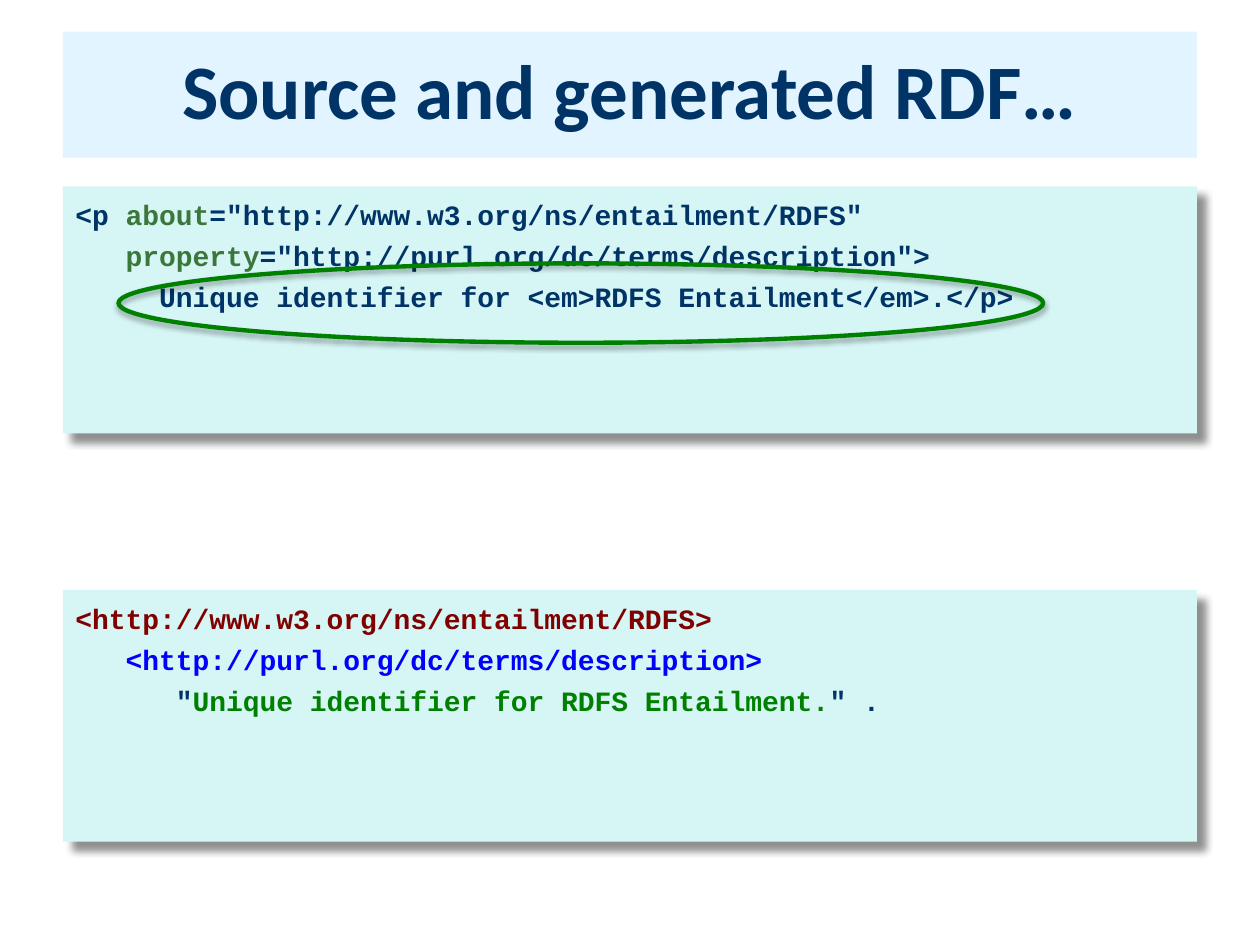
from dataclasses import dataclass
from typing import Optional

from lxml.etree import SubElement
from pptx import Presentation
from pptx.dml.color import RGBColor as RGB
from pptx.enum.shapes import MSO_SHAPE as Shape
from pptx.enum.text import MSO_ANCHOR as Anchor, PP_ALIGN as Align
from pptx.oxml.ns import qn
from pptx.util import Cm, Pt


@dataclass(frozen=True)
class Theme:
    navy: str = "003366"
    attribute: str = "3B773B"
    subject: str = "800000"
    predicate: str = "0000FF"
    literal: str = "008000"
    title_fill: str = "E1F4FF"
    code_fill: str = "D6F5F5"
    title_font: str = "Calibri"
    code_font: str = "Courier New"
    title_size: int = 44
    code_size: int = 16


@dataclass(frozen=True)
class Shadow:
    opacity: int
    blur: float
    distance: float
    angle: int


@dataclass(frozen=True)
class Box:
    """A filled or outlined shape, placed in centimetres."""
    left: float
    top: float
    width: float
    height: float
    fill: Optional[str] = None
    line: Optional[str] = None
    kind: Shape = Shape.RECTANGLE
    shadow: Optional[Shadow] = None


@dataclass(frozen=True)
class Run:
    text: str
    color: str


T = Theme()
LEFT, WIDTH = 1.27, 22.86
CODE_SHADOW = Shadow(43, 4, 7, 45)

TITLE = Box(LEFT, 0.64, WIDTH, 2.54, T.title_fill)
SOURCE = Box(LEFT, 3.76, WIDTH, 4.98, T.code_fill, shadow=CODE_SHADOW)
GENERATED = Box(LEFT, 11.89, WIDTH, 5.08, T.code_fill, shadow=CODE_SHADOW)
HIGHLIGHT = Box(2.39, 5.31, 18.64, 1.6, line=T.literal, kind=Shape.OVAL,
                shadow=Shadow(35, 3.1, 1.8, 90))

SOURCE_CODE = [
    [Run("<p ", T.navy), Run("about", T.attribute),
     Run('="http://www.w3.org/ns/entailment/RDFS"', T.navy)],
    [Run("   ", T.navy), Run("property", T.attribute),
     Run('="http://purl.org/dc/terms/description">', T.navy)],
    [Run("     Unique identifier for <em>RDFS Entailment</em>.</p>", T.navy)],
]
GENERATED_CODE = [
    [Run("<http://www.w3.org/ns/entailment/RDFS>", T.subject)],
    [Run("   ", T.navy),
     Run("<http://purl.org/dc/terms/description>", T.predicate)],
    [Run('      "', T.navy),
     Run("Unique identifier for RDFS Entailment.", T.literal),
     Run('" .', T.navy)],
]


def set_attributes(target, values: dict) -> None:
    for name, value in values.items():
        setattr(target, name, value)


def add_shadow(s, shadow: Shadow) -> None:
    effects = s._element.spPr.find(qn("a:effectLst"))
    outer = SubElement(effects, qn("a:outerShdw"), {
        "blurRad": str(Pt(shadow.blur)), "dist": str(Pt(shadow.distance)),
        "dir": str(shadow.angle * 60000), "algn": "ctr", "rotWithShape": "0"})
    color = SubElement(outer, qn("a:srgbClr"), val="000000")
    SubElement(color, qn("a:alpha"), val=str(shadow.opacity * 1000))


def add_box(slide, box: Box):
    place = (Cm(v) for v in (box.left, box.top, box.width, box.height))
    s = slide.shapes.add_shape(box.kind, *place)
    if box.fill:
        s.fill.solid()
        s.fill.fore_color.rgb = RGB.from_string(box.fill)
    else:
        s.fill.background()
    if box.line:
        s.line.color.rgb = RGB.from_string(box.line)
        s.line.width = Pt(2.5)
    else:
        s.line.fill.background()
    s.shadow.inherit = False
    if box.shadow:
        add_shadow(s, box.shadow)
    return s


def write(s, lines: list[list[Run]], frame: dict, paragraph: dict,
          font: dict, gap: float = 0) -> None:
    """Write one paragraph per line, with a gap in points between them."""
    tf = s.text_frame
    set_attributes(tf, {"word_wrap": True, **frame})
    for i, line in enumerate(lines):
        p = tf.add_paragraph() if i else tf.paragraphs[0]
        set_attributes(p, {**paragraph, "space_before": Pt(gap if i else 0)})
        for part in line:
            r = p.add_run()
            r.text = part.text
            set_attributes(r.font, {"bold": True, **font})
            r.font.color.rgb = RGB.from_string(part.color)


def main() -> None:
    prs = Presentation()
    prs.slide_width, prs.slide_height = Cm(25.4), Cm(19.05)
    slide = prs.slides.add_slide(prs.slide_layouts[6])

    write(add_box(slide, TITLE), [[Run("Source and generated RDF…", T.navy)]],
          {"vertical_anchor": Anchor.MIDDLE},
          {"alignment": Align.CENTER, "line_spacing": 0.9},
          {"name": T.title_font, "size": Pt(T.title_size)})
    for box, code in ((SOURCE, SOURCE_CODE), (GENERATED, GENERATED_CODE)):
        write(add_box(slide, box), code,
              {"vertical_anchor": Anchor.TOP, "margin_top": Cm(0.23)},
              {"alignment": Align.LEFT},
              {"name": T.code_font, "size": Pt(T.code_size)}, gap=4.2)
    add_box(slide, HIGHLIGHT)

    prs.save("out.pptx")


if __name__ == "__main__":
    main()
